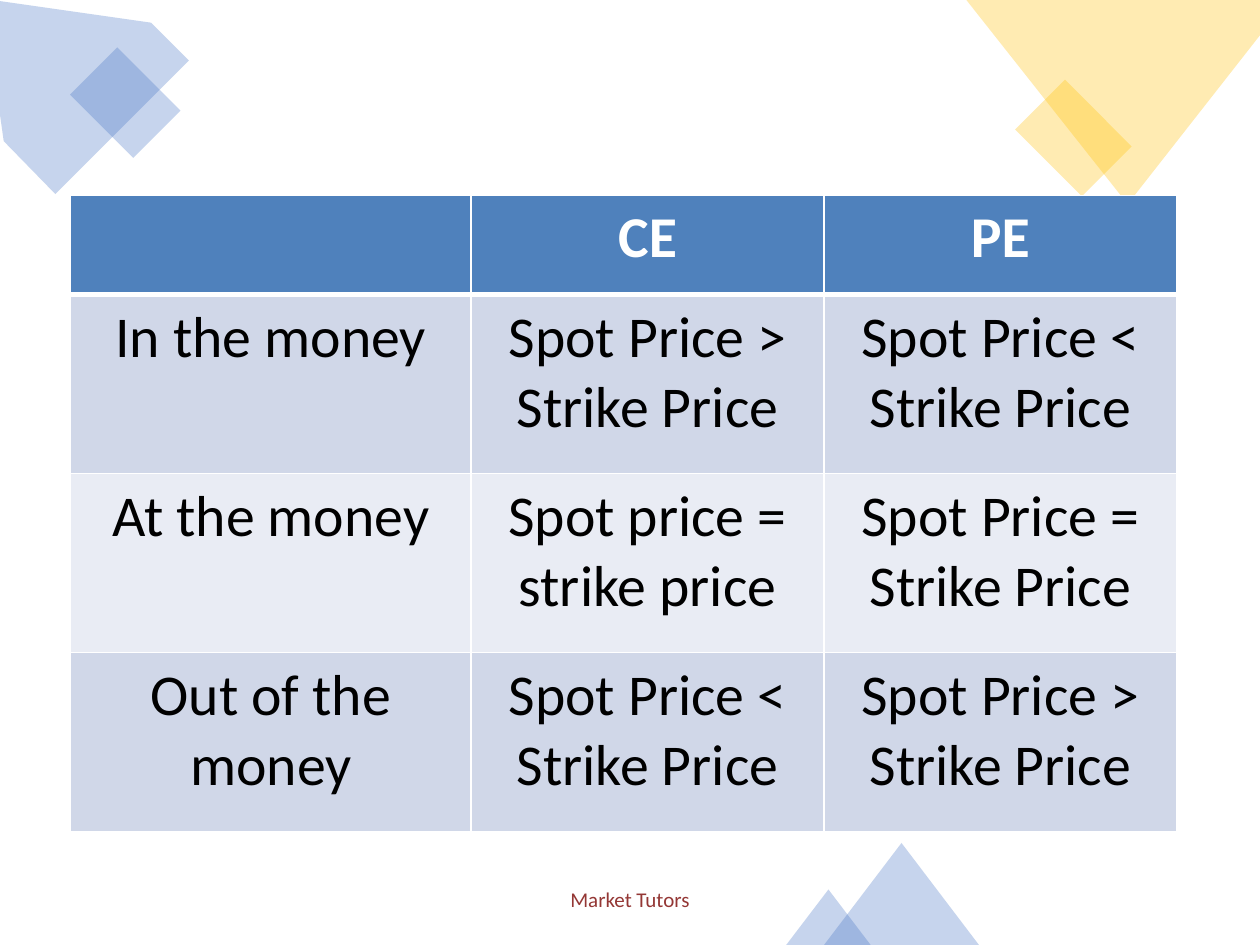
from lxml.etree import SubElement
from pptx import Presentation
from pptx.dml.color import RGBColor
from pptx.enum.shapes import MSO_SHAPE
from pptx.enum.text import MSO_ANCHOR, PP_ALIGN
from pptx.oxml.ns import qn
from pptx.util import Inches, Pt

FONT = "Calibri"
BLUE, GOLD, WHITE, BLACK = "4472C4", "FFC000", "FFFFFF", "000000"
HEADER_FILL, BAND_FILLS = "4F81BC", ("E9ECF4", "D0D7E8")
FOOTER_COLOR = "943735"

CORNER_PATCH = [(1.2, 0.18), (-0.13, -0.01), (0.03, 1.12), (0.44, 1.54), (1.5, 0.48)]
CORNER_WEDGE = [(10, 0), (7.67, 0), (8.95, 1.62), (10, 0.28)]

ROWS = [
    ("", "CE", "PE"),
    ("In the money", "Spot Price > Strike Price", "Spot Price < Strike Price"),
    ("At the money", "Spot price = strike price", "Spot Price = Strike Price"),
    ("Out of the money", "Spot Price < Strike Price", "Spot Price > Strike Price"),
]
COLUMN_WIDTHS = (3.18, 2.8, 2.8)
ROW_HEIGHTS = (0.79, 1.42, 1.42, 1.42)


def rgb(color):
    return RGBColor.from_string(color)


def make_translucent(shape, color):
    shape.shadow.inherit = False
    shape.line.fill.background()
    shape.fill.solid()
    shape.fill.fore_color.rgb = rgb(color)
    fill_color = shape.fill._xPr.find(qn("a:solidFill"))[0]
    SubElement(fill_color, qn("a:alpha")).set("val", "30000")


def add_polygon(slide, points, color):
    corners = [(Inches(x), Inches(y)) for x, y in points]
    builder = slide.shapes.build_freeform(*corners[0])
    builder.add_line_segments(corners[1:], close=True)
    make_translucent(builder.convert_to_shape(), color)


def add_preset(slide, kind, box, color, rotation=0):
    shape = slide.shapes.add_shape(kind, *map(Inches, box))
    shape.rotation = rotation
    make_translucent(shape, color)


def add_decorations(slide):
    add_polygon(slide, CORNER_PATCH, BLUE)
    add_preset(slide, MSO_SHAPE.RECTANGLE, (0.73, 0.46, 0.53, 0.71), BLUE, 315)
    add_preset(slide, MSO_SHAPE.RECTANGLE, (8.24, 0.72, 0.56, 0.75), GOLD, 315)
    add_polygon(slide, CORNER_WEDGE, GOLD)
    for box in ((6.54, 6.69, 1.23, 0.81), (6.24, 7.06, 0.67, 0.44)):
        add_preset(slide, MSO_SHAPE.ISOSCELES_TRIANGLE, box, BLUE)


def set_text(paragraph, text, size, color, bold=False):
    paragraph.text = text
    paragraph.alignment = PP_ALIGN.CENTER
    font = paragraph.font
    font.name, font.size, font.bold = FONT, Pt(size), bold
    font.color.rgb = rgb(color)


def set_borders(cell, top, bottom):
    """Draw white cell borders; top and bottom are widths in points."""
    properties = cell._tc.get_or_add_tcPr()
    widths = {"a:lnL": 1, "a:lnR": 1, "a:lnT": top, "a:lnB": bottom}
    for position, (tag, width) in enumerate(widths.items()):
        line = properties.makeelement(qn(tag), {"w": str(Pt(width))})
        SubElement(SubElement(line, qn("a:solidFill")), qn("a:srgbClr")).set("val", WHITE)
        properties.insert(position, line)


def add_option_table(slide, left, top):
    table = slide.shapes.add_table(
        len(ROWS), len(COLUMN_WIDTHS), Inches(left), Inches(top),
        Inches(sum(COLUMN_WIDTHS)), Inches(sum(ROW_HEIGHTS)),
    ).table
    for column, width in zip(table.columns, COLUMN_WIDTHS):
        column.width = Inches(width)
    for index, (row, height, texts) in enumerate(zip(table.rows, ROW_HEIGHTS, ROWS)):
        row.height = Inches(height)
        is_header = index == 0
        for cell, text in zip(row.cells, texts):
            cell.margin_left = cell.margin_right = cell.margin_bottom = 0
            cell.margin_top = Inches(0.06)
            cell.fill.solid()
            cell.fill.fore_color.rgb = rgb(HEADER_FILL if is_header else BAND_FILLS[index % 2])
            set_borders(cell, top=3 if index == 1 else 1, bottom=3 if is_header else 1)
            paragraph = cell.text_frame.paragraphs[0]
            set_text(paragraph, text, 33, WHITE if is_header else BLACK, is_header)
            paragraph.space_before = Pt(2.5)


def add_footer(slide, box):
    frame = slide.shapes.add_textbox(*map(Inches, box)).text_frame
    frame.word_wrap = True
    frame.vertical_anchor = MSO_ANCHOR.MIDDLE
    paragraph = frame.paragraphs[0]
    set_text(paragraph, "Market Tutors", 12, FOOTER_COLOR)
    paragraph.line_spacing = Pt(12.4)


def main():
    presentation = Presentation()
    presentation.slide_width, presentation.slide_height = Inches(10), Inches(7.5)
    slide = presentation.slides.add_slide(presentation.slide_layouts[6])
    add_decorations(slide)
    add_option_table(slide, 0.56, 1.55)
    add_footer(slide, (3.31, 6.95, 3.38, 0.4))
    presentation.save("out.pptx")


if __name__ == "__main__":
    main()
